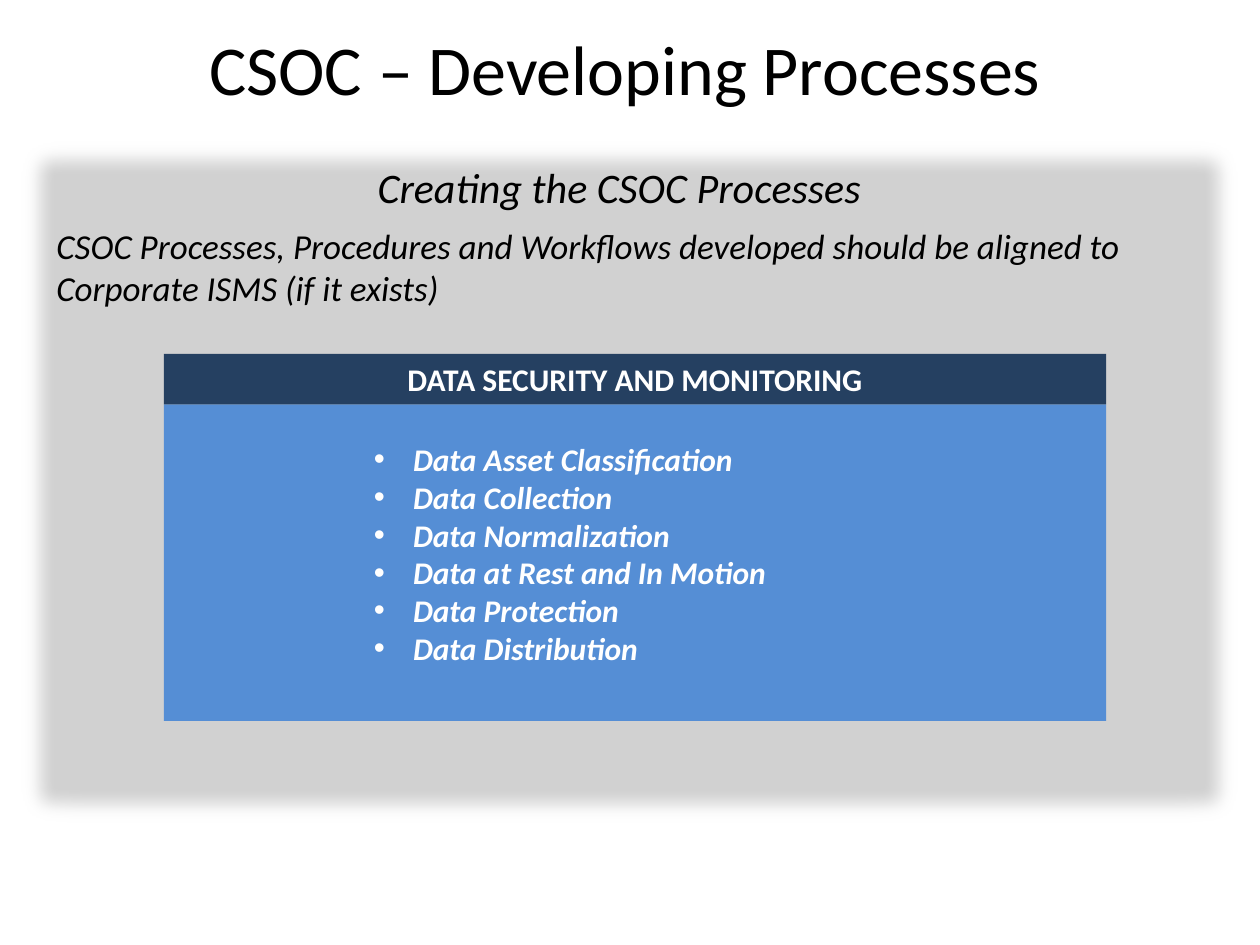
from lxml.etree import SubElement
from pptx import Presentation
from pptx.dml.color import RGBColor
from pptx.enum.shapes import MSO_SHAPE
from pptx.enum.text import MSO_ANCHOR, PP_ALIGN
from pptx.oxml.ns import qn
from pptx.util import Inches, Pt

COLORS = {
    "panel": "D1D1D1",
    "card": "558ED5",
    "header": "254061",
    "dark": "000000",
    "light": "FFFFFF",
}
WIDTH, HEIGHT = 10, 7.5
CARD_LEFT, CARD_WIDTH = 0.13, 0.748  # shares of the slide width
HEADER_TOP, CARD_TOP = 2.81 / HEIGHT, 3.21 / HEIGHT  # shares of the height


def format_paragraph(paragraph, text, size=18, color="dark", bold=False,
                     italic=False, align=PP_ALIGN.LEFT, before=0, bullet=False):
    """Fill one paragraph and set its format."""
    if bullet:
        properties = paragraph._p.get_or_add_pPr()
        indent = Inches(0.31)
        properties.set("marL", str(indent))
        properties.set("indent", str(-indent))
        SubElement(properties, qn("a:buFont")).set("typeface", "Arial")
        SubElement(properties, qn("a:buChar")).set("char", "•")
    paragraph.alignment = align
    paragraph.space_before = Pt(before)
    run = paragraph.add_run()
    run.text = text
    font = run.font
    font.name = "Calibri"
    font.size = Pt(size)
    font.bold = bold
    font.italic = italic
    font.color.rgb = RGBColor.from_string(COLORS[color])


class SlideBuilder:
    """Places elements by shares of the slide's width and height."""

    def __init__(self, presentation):
        self.presentation = presentation
        self.slide = presentation.slides.add_slide(presentation.slide_layouts[6])

    def place(self, left, top, width, height):
        slide_width = self.presentation.slide_width
        slide_height = self.presentation.slide_height
        return (int(left * slide_width), int(top * slide_height),
                int(width * slide_width), int(height * slide_height))

    def rectangle(self, box, color, soft_edge=0):
        shape = self.slide.shapes.add_shape(MSO_SHAPE.RECTANGLE, *self.place(*box))
        shape.shadow.inherit = False
        shape.fill.solid()
        shape.fill.fore_color.rgb = RGBColor.from_string(COLORS[color])
        shape.line.fill.background()
        if soft_edge:
            effects = shape._element.spPr.find(qn("a:effectLst"))
            SubElement(effects, qn("a:softEdge")).set("rad", str(Pt(soft_edge)))
        return shape

    def text_box(self, box, paragraphs, anchor=MSO_ANCHOR.TOP):
        shape = self.slide.shapes.add_textbox(*self.place(*box))
        self.fill_text(shape, paragraphs, anchor)

    def fill_text(self, shape, paragraphs, anchor=MSO_ANCHOR.MIDDLE):
        frame = shape.text_frame
        frame.word_wrap = True
        frame.vertical_anchor = anchor
        for index, (text, style) in enumerate(paragraphs):
            paragraph = frame.add_paragraph() if index else frame.paragraphs[0]
            format_paragraph(paragraph, text, **style)


def main():
    presentation = Presentation()
    presentation.slide_width = Inches(WIDTH)
    presentation.slide_height = Inches(HEIGHT)
    builder = SlideBuilder(presentation)
    center = PP_ALIGN.CENTER

    # Soft grey panel and blue card
    builder.rectangle((0.012, 0.143, 0.976, 0.735), "panel", soft_edge=12.5)
    builder.rectangle((CARD_LEFT, CARD_TOP, CARD_WIDTH, 0.335), "card")

    # Title
    builder.text_box((0.043, 0.019, 0.906, 0.105), [
        ("CSOC – Developing Processes", dict(size=40, align=center)),
    ], MSO_ANCHOR.MIDDLE)

    # Introduction
    builder.text_box((0.035, 0.164, 0.913, 0.173), [
        ("Creating the CSOC Processes", dict(size=24, italic=True, align=center)),
        ("CSOC Processes, Procedures and Workflows developed should be aligned "
         "to Corporate ISMS (if it exists)",
         dict(size=20, italic=True, before=7.3)),
    ])

    # Card header
    header = builder.rectangle(
        (CARD_LEFT, HEADER_TOP, CARD_WIDTH, CARD_TOP - HEADER_TOP), "header")
    builder.fill_text(header, [
        ("DATA SECURITY AND MONITORING",
         dict(color="light", bold=True, align=center)),
    ])

    # Card bullets
    topics = ["Data Asset Classification", "Data Collection",
              "Data Normalization", "Data at Rest and In Motion",
              "Data Protection", "Data Distribution"]
    bullet_style = dict(color="light", bold=True, italic=True, bullet=True)
    builder.text_box((0.287, 0.459, 0.5, 0.256),
                     [(topic, bullet_style) for topic in topics])

    presentation.save("out.pptx")


if __name__ == "__main__":
    main()
